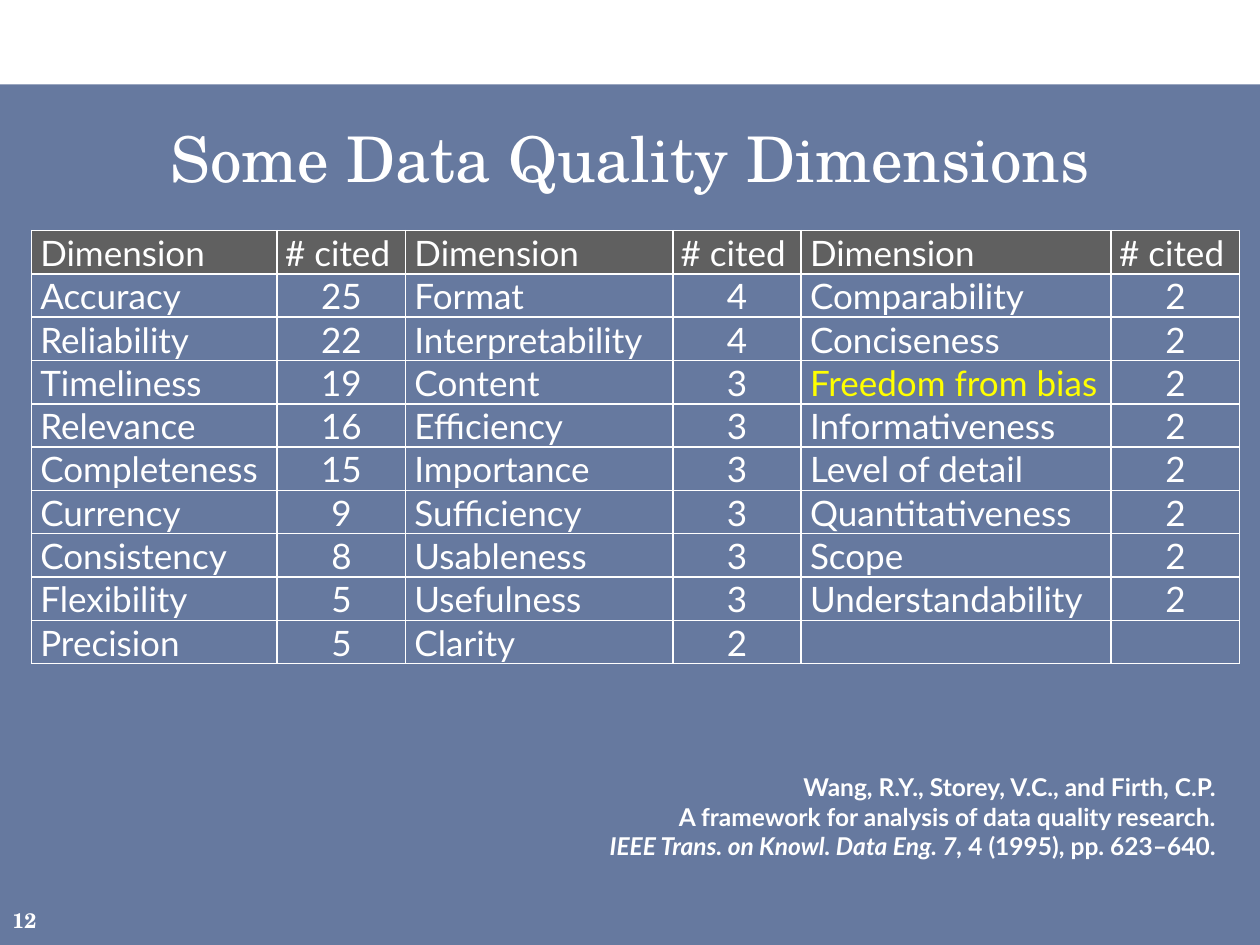
from lxml.etree import SubElement
from pptx import Presentation
from pptx.dml.color import RGBColor
from pptx.enum.shapes import MSO_SHAPE
from pptx.enum.text import MSO_ANCHOR, PP_ALIGN
from pptx.oxml.ns import qn
from pptx.util import Inches, Pt

COLORS = {"panel": "002060", "text": "FFFFFF", "header": "606060", "highlight": "FFFF00"}
HEADING_FONT = "TeX Gyre Schola"
BODY_FONT = "Lato"

TITLE = "Some Data Quality Dimensions"
HEADER = ("Dimension", "# cited") * 3
ROWS = [
    ("Accuracy", "25", "Format", "4", "Comparability", "2"),
    ("Reliability", "22", "Interpretability", "4", "Conciseness", "2"),
    ("Timeliness", "19", "Content", "3", "Freedom from bias", "2"),
    ("Relevance", "16", "Efficiency", "3", "Informativeness", "2"),
    ("Completeness", "15", "Importance", "3", "Level of detail", "2"),
    ("Currency", "9", "Sufficiency", "3", "Quantitativeness", "2"),
    ("Consistency", "8", "Usableness", "3", "Scope", "2"),
    ("Flexibility", "5", "Usefulness", "3", "Understandability", "2"),
    ("Precision", "5", "Clarity", "2", "", ""),
]
HIGHLIGHTED = "Freedom from bias"
COLUMN_WIDTHS = (1.95, 1.02, 2.12, 1.02, 2.46, 1.02)
TABLE_HEIGHT = 3.44
# Each line is a list of (text, italic) runs.
CITATION = [
    [("Wang, R.Y., Storey, V.C., and Firth, C.P.", False)],
    [("A framework for analysis of data quality research.", False)],
    [("IEEE Trans. on Knowl. Data Eng. 7, ", True), ("4 (1995), pp. 623–640.", False)],
]


def rgb(name):
    return RGBColor.from_string(COLORS[name])


def style(paragraph, size, font_name, color="text", bold=False, align=PP_ALIGN.LEFT):
    paragraph.alignment = align
    font = paragraph.font
    font.size, font.name, font.bold = Pt(size), font_name, bold
    font.color.rgb = rgb(color)


def add_text(slide, box, lines, anchor=MSO_ANCHOR.TOP, **look):
    shape = slide.shapes.add_textbox(*map(Inches, box))
    frame = shape.text_frame
    frame.word_wrap = True
    frame.vertical_anchor = anchor
    for index, runs in enumerate(lines):
        paragraph = frame.add_paragraph() if index else frame.paragraphs[0]
        style(paragraph, **look)
        for text, italic in runs:
            run = paragraph.add_run()
            run.text = text
            run.font.italic = italic


def add_panel(slide):
    panel = slide.shapes.add_shape(
        MSO_SHAPE.RECTANGLE, 0, Inches(0.67), Inches(10), Inches(6.83))
    panel.shadow.inherit = False
    panel.line.fill.background()
    panel.fill.solid()
    panel.fill.fore_color.rgb = rgb("panel")
    color = panel.fill._xPr.find(qn("a:solidFill"))[0]
    SubElement(color, qn("a:alpha"), val="60000")


def add_borders(cell):
    properties = cell._tc.get_or_add_tcPr()
    for position, side in enumerate(("lnL", "lnR", "lnT", "lnB")):
        line = SubElement(properties, qn(f"a:{side}"), w=str(Pt(1)))
        fill = SubElement(line, qn("a:solidFill"))
        SubElement(fill, qn("a:srgbClr"), val=COLORS["text"])
        properties.insert(position, line)


def fill_cell(cell, text, is_header, is_count):
    cell.vertical_anchor = MSO_ANCHOR.BOTTOM
    cell.margin_left = Inches(0.01 if is_count else 0.07)
    cell.margin_right = Inches(0.07 if is_header else 0.01)
    cell.margin_top, cell.margin_bottom = Inches(0.01), 0
    if is_header:
        cell.fill.solid()
        cell.fill.fore_color.rgb = rgb("header")
    else:
        cell.fill.background()
    add_borders(cell)
    cell.text = text
    style(cell.text_frame.paragraphs[0], 20, BODY_FONT,
          color="highlight" if text == HIGHLIGHTED else "text",
          align=PP_ALIGN.CENTER if is_count else PP_ALIGN.LEFT)


def add_dimension_table(slide):
    rows = [HEADER] + ROWS
    table = slide.shapes.add_table(
        len(rows), len(HEADER), Inches(0.25), Inches(1.83),
        Inches(sum(COLUMN_WIDTHS)), Inches(TABLE_HEIGHT)).table
    table.first_row = table.horz_banding = False
    for column, width in zip(table.columns, COLUMN_WIDTHS):
        column.width = Inches(width)
    for row_index, values in enumerate(rows):
        for column_index, text in enumerate(values):
            fill_cell(table.cell(row_index, column_index), text,
                      is_header=row_index == 0, is_count=column_index % 2 == 1)


def main():
    presentation = Presentation()
    presentation.slide_width, presentation.slide_height = Inches(10), Inches(7.5)
    slide = presentation.slides.add_slide(presentation.slide_layouts[6])
    add_panel(slide)
    add_text(slide, (0.25, 0.83, 9.5, 0.83), [[(TITLE, False)]], MSO_ANCHOR.MIDDLE,
             size=36, font_name=HEADING_FONT, align=PP_ALIGN.CENTER)
    add_dimension_table(slide)
    add_text(slide, (1.75, 6.08, 8, 0.81), CITATION,
             size=14, font_name=BODY_FONT, bold=True, align=PP_ALIGN.RIGHT)
    add_text(slide, (0, 7.1, 0.5, 0.4), [[("12", False)]], MSO_ANCHOR.MIDDLE,
             size=12, font_name=HEADING_FONT, bold=True)
    presentation.save("out.pptx")


if __name__ == "__main__":
    main()
